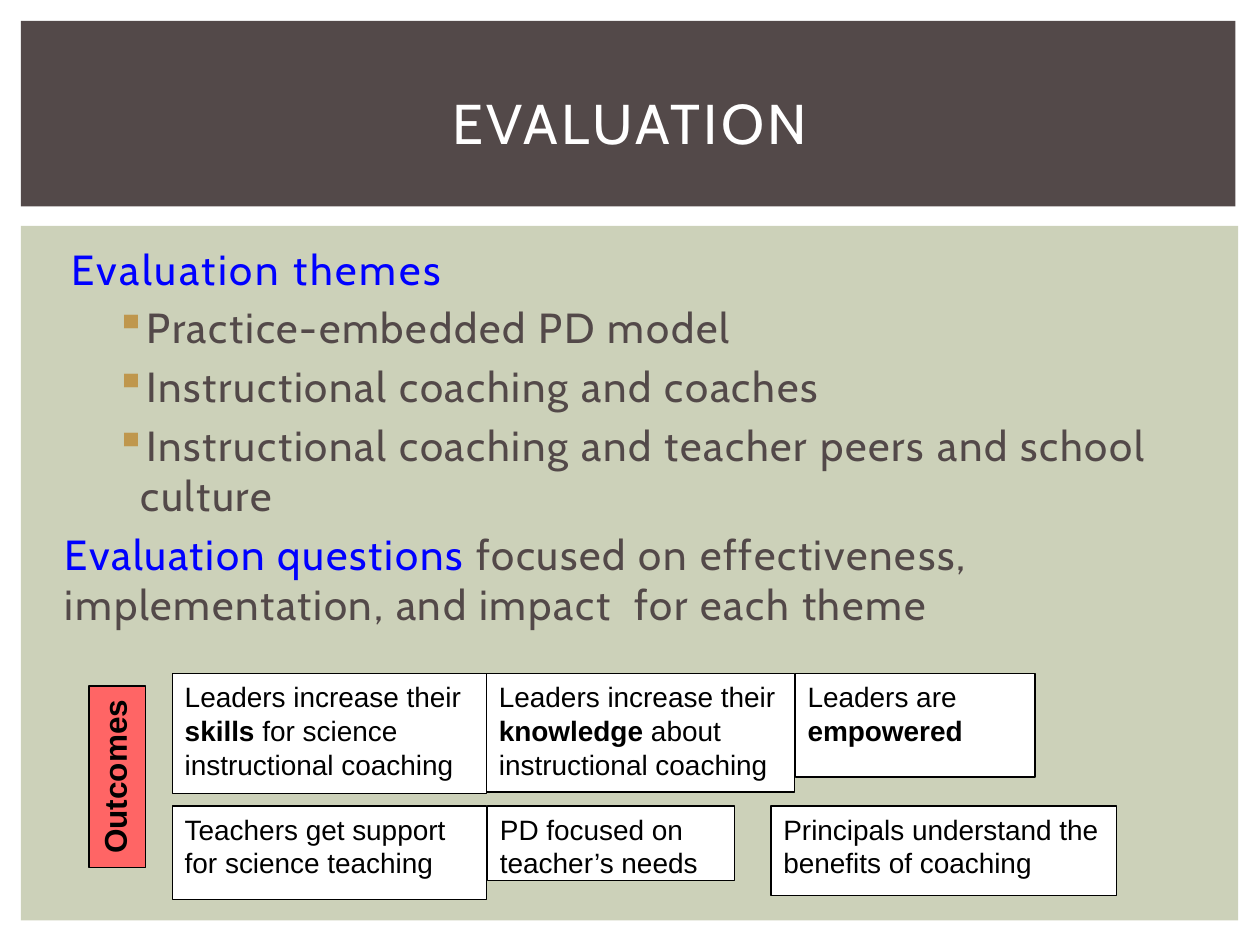
"""Build the evaluation slide with its themes and outcome boxes."""
import dataclasses

import lxml.etree
import pptx
import pptx.dml.color
import pptx.enum.shapes
import pptx.enum.text
import pptx.oxml.ns
import pptx.util

Pt = pptx.util.Pt
RGB = pptx.dml.color.RGBColor.from_string
qn = pptx.oxml.ns.qn
ALIGN = pptx.enum.text.PP_ALIGN
ANCHOR = pptx.enum.text.MSO_ANCHOR


@dataclasses.dataclass(frozen=True)
class Theme:
    heading_font: str = "Cabin"
    box_font: str = "Arial"
    title_size: int = 32
    body_size: int = 24
    label_size: int = 18
    box_size: int = 16
    dark: str = "534949"
    sage: str = "CCD1B9"
    highlight: str = "0000FF"
    bullet: str = "BF974D"
    coral: str = "FF6565"
    white: str = "FFFFFF"
    black: str = "000000"


theme = Theme()


def write(frame, *runs, font=theme.box_font, size=theme.box_size, color=theme.black,
          bold=False, tracking=0, align=ALIGN.LEFT, anchor=ANCHOR.TOP,
          before=0, spacing=1.0, margin=0, indent=0, bullet=None):
    """Add a paragraph; each run is a text or a (text, color, bold) tuple."""
    frame.word_wrap = True
    frame.vertical_anchor = anchor
    paragraph = frame.add_paragraph() if frame.text else frame.paragraphs[0]
    paragraph.alignment = align
    paragraph.space_before = Pt(before)
    paragraph.line_spacing = spacing
    properties = paragraph._p.get_or_add_pPr()
    properties.set("marL", str(Pt(margin)))
    properties.set("indent", str(Pt(indent)))
    if bullet:
        bullet_color = lxml.etree.SubElement(properties, qn("a:buClr"))
        lxml.etree.SubElement(bullet_color, qn("a:srgbClr"), val=theme.bullet)
        lxml.etree.SubElement(properties, qn("a:buChar"), char=bullet)
    for item in runs:
        text, run_color, run_bold = (item, color, bold) if isinstance(item, str) else item
        run = paragraph.add_run()
        run.text = text
        run.font.name = font
        run.font.size = Pt(size)
        run.font.bold = run_bold
        run.font.color.rgb = RGB(run_color)
        if tracking:
            run._r.get_or_add_rPr().set("spc", str(int(tracking * 100)))


def add_rectangle(left, top, width, height, fill, outline=None):
    """Add a flat rectangle, outlined only when a colour is given."""
    rectangle = slide.shapes.add_shape(
        pptx.enum.shapes.MSO_SHAPE.RECTANGLE, Pt(left), Pt(top), Pt(width), Pt(height))
    rectangle.shadow.inherit = False
    rectangle.fill.solid()
    rectangle.fill.fore_color.rgb = RGB(fill)
    if outline:
        rectangle.line.color.rgb = RGB(outline)
        rectangle.line.width = Pt(0.75)
    else:
        rectangle.line.fill.background()
    return rectangle


presentation = pptx.Presentation()
presentation.slide_width = Pt(720)
presentation.slide_height = Pt(540)
slide = presentation.slides.add_slide(presentation.slide_layouts[6])

add_rectangle(12, 129, 695.5, 397, theme.sage)
add_rectangle(12, 12, 694, 106, theme.dark)

themes = slide.shapes.add_textbox(Pt(30), Pt(129.6), Pt(661.7), Pt(255)).text_frame
body = dict(font=theme.heading_font, size=theme.body_size, color=theme.dark, before=4.8)
write(themes, ("Evaluation themes", theme.highlight, False),
      **body, tracking=1.5, spacing=1.2, margin=3.6)
for topic in ("Practice-embedded PD model",
              "Instructional coaching and coaches",
              "Instructional coaching and teacher peers and school culture"):
    write(themes, topic, **body, tracking=1, margin=43.2, indent=-14.4, bullet="▪")
write(themes, ("Evaluation questions ", theme.highlight, False),
      "focused on effectiveness, implementation, and impact  for each theme",
      **body, tracking=1)

title = slide.shapes.add_textbox(Pt(30), Pt(28), Pt(660), Pt(83)).text_frame
write(title, "EVALUATION", font=theme.heading_font, size=theme.title_size,
      color=theme.white, tracking=2, align=ALIGN.CENTER, anchor=ANCHOR.MIDDLE)

outcomes_label = add_rectangle(15.2, 427.7, 103.7, 32.3, theme.coral, theme.black)
outcomes_label.rotation = 270
write(outcomes_label.text_frame, "Outcomes", size=theme.label_size, bold=True,
      align=ALIGN.CENTER)

first_row, second_row = 385, 460.6
outcomes = [
    (98.5, first_row, 179.5, 68.4,
     ["Leaders increase their ", ("skills", theme.black, True),
      " for science instructional coaching"]),
    (278, first_row, 176, 67.6,
     ["Leaders increase their", (" knowledge ", theme.black, True),
      "about instructional coaching"]),
    (98.5, second_row, 179.5, 53.3, ["Teachers get support for science teaching"]),
    (440.6, second_row, 197.3, 51, ["Principals understand the benefits of coaching"]),
    (278.6, second_row, 141.2, 42.5, ["PD focused on teacher’s needs"]),
    (454.4, first_row, 137, 59, ["Leaders are ", ("empowered", theme.black, True)]),
]
for left, top, width, height, runs in outcomes:
    outcome = add_rectangle(left, top, width, height, theme.white, theme.black)
    write(outcome.text_frame, *runs)

presentation.save("out.pptx")
